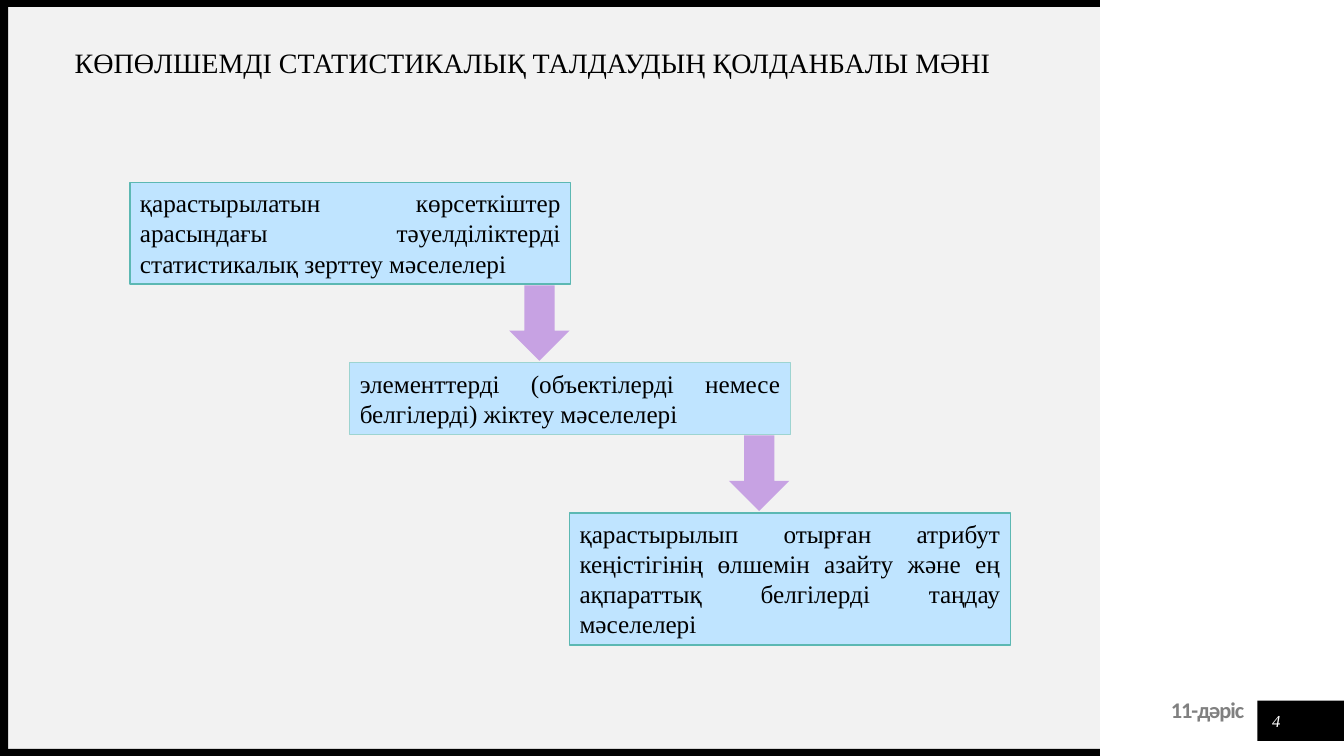
from pptx import Presentation
from pptx.dml.color import RGBColor
from pptx.enum.shapes import MSO_SHAPE
from pptx.enum.text import MSO_ANCHOR, PP_ALIGN
from pptx.util import Inches, Pt

RECT, DOWN_ARROW = MSO_SHAPE.RECTANGLE, MSO_SHAPE.DOWN_ARROW
TOP, MIDDLE = MSO_ANCHOR.TOP, MSO_ANCHOR.MIDDLE
LEFT, CENTER = PP_ALIGN.LEFT, PP_ALIGN.CENTER
RIGHT, JUSTIFY = PP_ALIGN.RIGHT, PP_ALIGN.JUSTIFY

COLORS = {
    "panel": "F2F2F2", "black": "000000", "white": "FFFFFF", "grey": "808080",
    "box": "BFE4FF", "edge": "5CB8B3", "light_edge": "9DD4D1", "arrow": "C7A2E3",
}
SERIF = "Times New Roman"

STEPS = [
    ("қарастырылатын көрсеткіштер арасындағы тәуелділіктерді "
     "cтатистикалық зерттеу мәселелері", 1.81, 1.01, "edge", 1),
    ("элементтерді (объектілерді немесе белгілерді) жіктеу мәселелері",
     3.6, 0.71, "light_edge", 0.75),
    ("қарастырылып отырған атрибут кеңістігінің өлшемін азайту және ең "
     "ақпараттық белгілерді таңдау мәселелері", 5.09, 1.31, "edge", 1),
]


def rgb(name):
    return RGBColor.from_string(COLORS[name])


def add_block(slide, kind, x, y, w, h, fill):
    sp = slide.shapes.add_shape(kind, Inches(x), Inches(y), Inches(w), Inches(h))
    sp.shadow.inherit = False
    sp.fill.solid()
    sp.fill.fore_color.rgb = rgb(fill)
    sp.line.fill.background()
    return sp


def write(sp, text, size, color, align, anchor=TOP, font=SERIF, wrap=True):
    tf = sp.text_frame
    tf.word_wrap = wrap
    tf.vertical_anchor = anchor
    p = tf.paragraphs[0]
    p.text = text
    p.alignment = align
    p.font.size = Pt(size)
    p.font.name = font
    p.font.color.rgb = rgb(color)
    return p


def add_label(slide, x, y, w, h, top_inset=0):
    sp = slide.shapes.add_textbox(Inches(x), Inches(y), Inches(w), Inches(h))
    tf = sp.text_frame
    tf.margin_left = tf.margin_right = tf.margin_bottom = 0
    tf.margin_top = Inches(top_inset)
    return sp


def add_frame(slide, w, h, bar):
    add_block(slide, RECT, bar, bar, w - bar, h - 2 * bar, "panel")
    for y in (0, h - bar):
        add_block(slide, RECT, 0, y, w, bar, "black")
    add_block(slide, RECT, 0, 0, 0.08, h, "black")


def add_footer(slide, x, y):
    add_block(slide, RECT, x, y, 0.86, 0.4, "black")
    lecture = add_label(slide, x - 1.95, y - 0.01, 1.82, 0.24, 0.04)
    p = write(lecture, "11-дәріс", 16, "grey", RIGHT, font="Calibri")
    p.font.bold = True
    p.line_spacing = Pt(14)
    p.runs[0].font._element.set("spc", "-75")
    number = add_label(slide, x + 0.04, y + 0.05, 0.3, 0.3)
    p = write(number, "4", 12, "white", CENTER, MIDDLE)
    p.font.italic = True


def add_title(slide, x, y, w, h):
    title = slide.shapes.title
    slide.shapes._spTree.append(title._element)
    title.left, title.top, title.width, title.height = map(Inches, (x, y, w, h))
    write(title, "КӨПӨЛШЕМДІ СТАТИСТИКАЛЫҚ ТАЛДАУДЫҢ ҚОЛДАНБАЛЫ МӘНІ",
          20, "black", LEFT, wrap=False)


def add_staircase(slide, left, w, shift):
    arrow_w, arrow_h = 0.6, 0.75
    for i, (text, y, h, edge, weight) in enumerate(STEPS):
        x = left + i * shift
        sp = add_block(slide, RECT, x, y, w, h, "box")
        sp.line.color.rgb = rgb(edge)
        sp.line.width = Pt(weight)
        write(sp, text, 18, "black", JUSTIFY)
        if i < len(STEPS) - 1:
            next_y = STEPS[i + 1][1]
            add_block(slide, DOWN_ARROW, x + w - arrow_w - 0.01,
                      next_y - arrow_h - 0.02, arrow_w, arrow_h, "arrow")


def main():
    prs = Presentation()
    prs.slide_width, prs.slide_height = Inches(13.33), Inches(7.5)
    slide = prs.slides.add_slide(prs.slide_layouts[5])
    add_frame(slide, 10.91, 7.5, 0.07)
    add_footer(slide, 12.47, 6.95)
    add_staircase(slide, 1.29, 4.37, 2.18)
    add_title(slide, 0.64, 0.4, 9.38, 0.44)
    prs.save("out.pptx")


if __name__ == "__main__":
    main()
